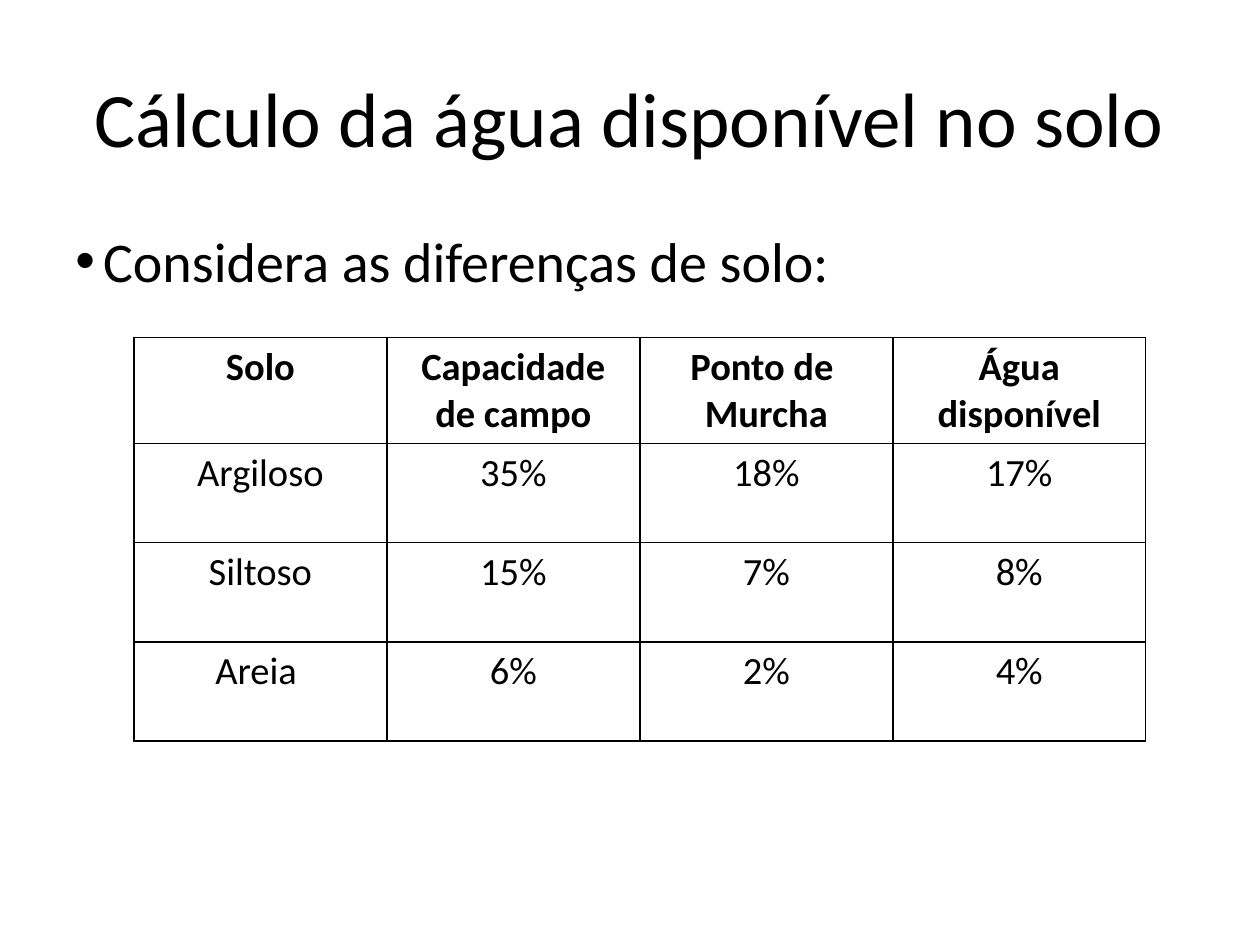
"""Builds a slide on available soil water, with a table by soil type."""
from lxml.etree import SubElement
from pptx import Presentation
from pptx.dml.color import RGBColor
from pptx.enum.text import MSO_ANCHOR as Anchor, PP_ALIGN as Align
from pptx.oxml.ns import qn
from pptx.util import Cm, Pt

TITLE = "Cálculo da água disponível no solo"
BULLET = "Considera as diferenças de solo:"
ROWS = [
    ("Solo", "Capacidade\nde campo", "Ponto de \nMurcha", "Água\ndisponível"),
    ("Argiloso", "35%", "18%", "17%"),
    ("Siltoso", "15%", "7%", "8%"),
    ("Areia ", "6%", "2%", "4%"),
]
BLACK = "000000"
TITLE_FONT = {"name": "Calibri", "size": Pt(44), "bold": False}
BULLET_FONT = {"name": "Calibri", "size": Pt(32)}
CELL_FONT = {"name": "Calibri", "size": Pt(22)}
TITLE_BOX = (1.27, 0.76, 22.86, 3.18)
BULLET_BOX = (1.27, 4.45, 22.86, 12.57)
TABLE_LEFT, TABLE_TOP = 2.7, 6.8
COL_WIDTH, HEADER_HEIGHT, ROW_HEIGHT = 5.1, 2.14, 2
INDENT = 0.56


def color(target, value):
    target.rgb = RGBColor.from_string(value)


def write(tf, text, font, align, **extra):
    tf.text = text
    for p in tf.paragraphs:
        p.alignment = align
        for r in p.runs:
            for name, value in {**font, **extra}.items():
                setattr(r.font, name, value)
            color(r.font.color, BLACK)


def add_bullet(p):
    pPr = p._p.get_or_add_pPr()
    pPr.set("marL", str(Cm(INDENT)))
    pPr.set("indent", str(-Cm(INDENT)))
    SubElement(pPr, qn("a:buFont"), typeface="Arial")
    SubElement(pPr, qn("a:buChar"), char="•")


def add_borders(cell):
    tcPr = cell._tc.get_or_add_tcPr()
    for i, side in enumerate(("lnL", "lnR", "lnT", "lnB")):
        ln = SubElement(tcPr, qn(f"a:{side}"), w=str(Pt(1)))
        fill = SubElement(ln, qn("a:solidFill"))
        SubElement(fill, qn("a:srgbClr"), val=BLACK)
        tcPr.insert(i, ln)


def add_title(slide):
    sp = slide.shapes.title
    sp.left, sp.top, sp.width, sp.height = map(Cm, TITLE_BOX)
    tf = sp.text_frame
    tf.vertical_anchor = Anchor.MIDDLE
    write(tf, TITLE, TITLE_FONT, Align.CENTER)


def add_body(slide):
    tf = slide.shapes.add_textbox(*map(Cm, BULLET_BOX)).text_frame
    tf.word_wrap = True
    write(tf, BULLET, BULLET_FONT, Align.LEFT)
    add_bullet(tf.paragraphs[0])


def add_soil_table(slide):
    heights = [HEADER_HEIGHT] + [ROW_HEIGHT] * (len(ROWS) - 1)
    n_cols = len(ROWS[0])
    size = (COL_WIDTH * n_cols, sum(heights))
    table = slide.shapes.add_table(
        len(ROWS), n_cols, *map(Cm, (TABLE_LEFT, TABLE_TOP, *size))).table
    table.horz_banding = False
    for col in table.columns:
        col.width = Cm(COL_WIDTH)
    for i, (row, height) in enumerate(zip(ROWS, heights)):
        table.rows[i].height = Cm(height)
        for j, text in enumerate(row):
            cell = table.cell(i, j)
            cell.fill.background()
            add_borders(cell)
            write(cell.text_frame, text, CELL_FONT, Align.CENTER, bold=i == 0)


def main():
    prs = Presentation()
    prs.slide_width, prs.slide_height = Cm(25.4), Cm(19.05)
    slide = prs.slides.add_slide(prs.slide_layouts[5])
    add_title(slide)
    add_body(slide)
    add_soil_table(slide)
    prs.save("out.pptx")


if __name__ == "__main__":
    main()
